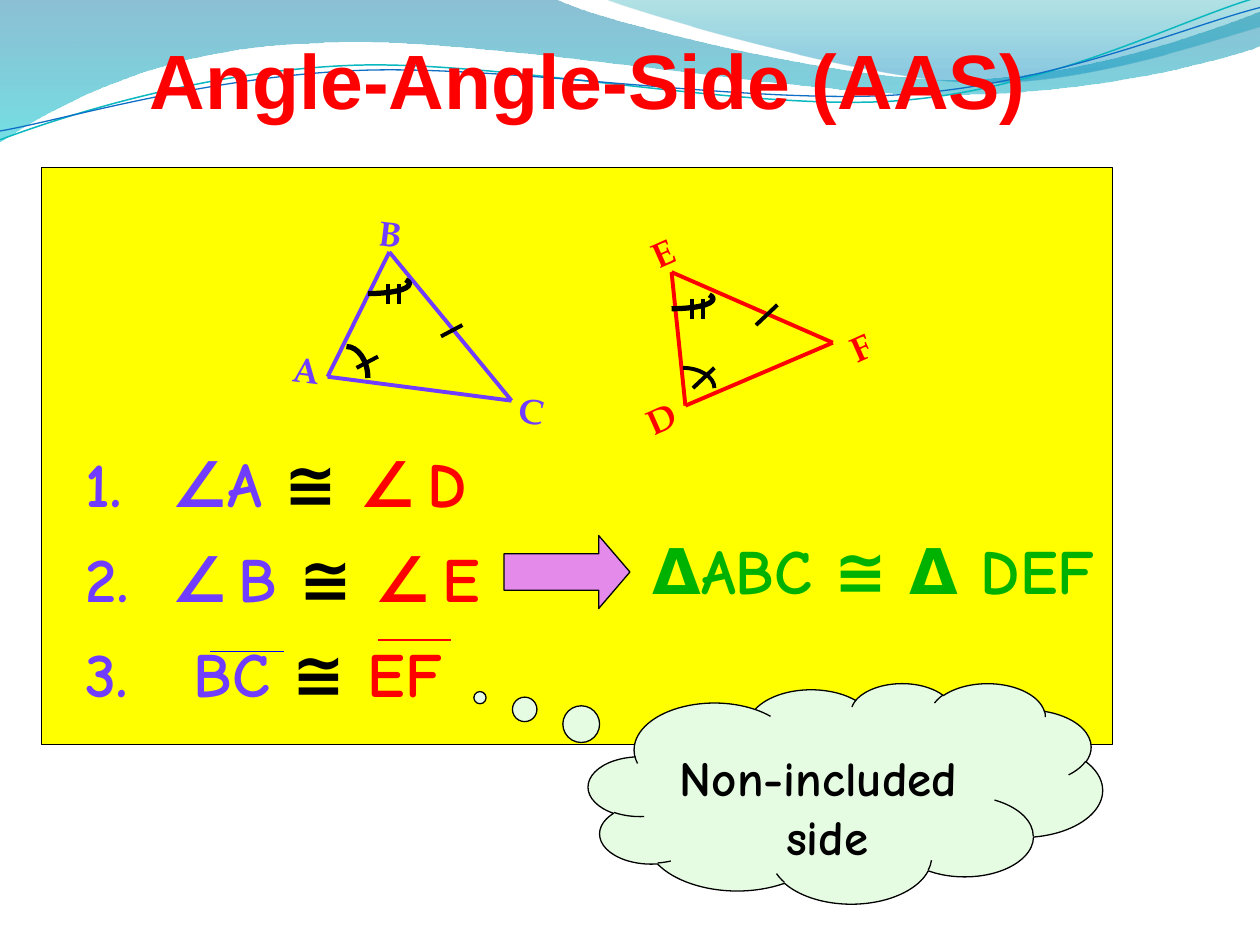
from dataclasses import dataclass

from lxml.etree import SubElement
from pptx import Presentation
from pptx.dml.color import RGBColor
from pptx.enum.shapes import MSO_CONNECTOR as CONN, MSO_SHAPE as SHAPE
from pptx.enum.text import MSO_ANCHOR as ANCHOR, MSO_AUTO_SIZE as FIT, PP_ALIGN as ALIGN
from pptx.oxml.ns import qn
from pptx.util import Inches, Pt


@dataclass(frozen=True)
class Theme:
    red: str = "FF0000"
    purple: str = "703DFF"
    green: str = "00B200"
    black: str = "000000"
    blue: str = "0000FF"
    yellow: str = "FFFF00"
    pink: str = "E38AEA"
    mint: str = "E6FCE2"
    wave_lines: tuple = (("0AB8BF", 0.85), ("0F6FC6", 0.75))
    title_font: str = "Arial"
    body_font: str = "Comic Neue"
    label_font: str = "TeX Gyre Pagella"
    title: int = 44
    body: int = 36
    callout: int = 28
    label: int = 20
    gap: int = 18
    thin: float = 0.75
    medium: float = 2.25
    thick: float = 3


T = Theme()


def rgb(value):
    return RGBColor.from_string(value)


def place(sp, box):
    for name, value in zip(("left", "top", "width", "height"), box):
        setattr(sp, name, Inches(value))


def add_run(p, text, color, size, font):
    r = p.add_run()
    r.text = text
    for name, value in dict(name=font, size=Pt(size), bold=True).items():
        setattr(r.font, name, value)
    r.font.color.rgb = rgb(color)


def format_frame(tf, **values):
    for name, value in dict(auto_size=FIT.NONE, word_wrap=True, **values).items():
        setattr(tf, name, value)


def add_line(shapes, start, end, color, width):
    line = shapes.add_connector(CONN.STRAIGHT, *map(Inches, (*start, *end)))
    line.line.color.rgb = rgb(color)
    line.line.width = Pt(width)
    SubElement(line._element.spPr, qn("a:effectLst"))


def add_block(shapes, kind, box, fill, adjustments=()):
    sp = shapes.add_shape(kind, *map(Inches, box))
    sp.shadow.inherit = False
    sp.fill.solid()
    sp.fill.fore_color.rgb = rgb(fill)
    sp.line.color.rgb = rgb(T.black)
    sp.line.width = Pt(T.thin)
    for i, value in enumerate(adjustments):
        sp.adjustments[i] = value
    return sp


def curves(points):
    """Split points into cubic Bezier segments of three points each."""
    return [points[i:i + 3] for i in range(0, len(points), 3)]


def add_path(shapes, start, segments, close=False):
    """Freeform whose segments hold one point for a line, three for a curve."""
    builder = shapes.build_freeform(*map(Inches, start))
    builder.add_line_segments([tuple(map(Inches, q)) for s in segments for q in s], close=close)
    sp = builder.convert_to_shape()
    sp.shadow.inherit = False
    path = next(sp._element.iter(qn("a:path")))
    steps = iter(path.findall(qn("a:lnTo")))
    for segment in segments:
        first, *rest = [next(steps) for _ in segment]
        if rest:
            first.tag = qn("a:cubicBezTo")
        for step in rest:
            first.append(step[0])
            path.remove(step)
    return sp


def add_curve(shapes, points, color, width):
    sp = add_path(shapes, points[0], curves(points[1:]))
    sp.fill.background()
    sp.line.color.rgb = rgb(color)
    sp.line.width = Pt(width)


def add_wave(shapes, start, segments, stops):
    sp = add_path(shapes, start, segments, close=True)
    sp.line.fill.background()
    sp.fill.gradient()
    sp.fill.gradient_angle = 270
    for stop, (position, color, alpha) in zip(sp.fill.gradient_stops, stops):
        stop.position = position
        stop.color.rgb = rgb(color)
        clr = next(stop._gs.iter(qn("a:srgbClr")))
        SubElement(clr, qn("a:alpha"), val=str(alpha * 1000))


def add_banner(shapes):
    upper = [(4.76, .17), (6.64, .63), (7.58, .63), (8.53, .63), (9.58, .26), (10, .09)]
    lower = [(9.83, .44), (8.7, .76), (7.46, .75), (6.22, .75), (3.82, .28),
             (2.57, .34), (1.29, .36), (.46, .83), (-.01, 1.13)]
    add_wave(shapes, (0, 0), [[(4.4, -.01)], *curves(upper), [(10.01, .36)], *curves(lower)],
             [(0, "0074A1", 45), (1, "00C6CF", 55)])
    crest = [(5.09, .11), (6.82, .62), (7.69, .65), (8.56, .69), (9.61, .32), (10, .21)]
    add_wave(shapes, (4.79, -.01), [*curves(crest), [(10, 0)]],
             [(0, "00A1A9", 30), (.8, "008BBF", 45)])
    strands = ([(0, 1.11), (.48, .93), (1.58, .57), (2.77, .52), (3.95, .47), (5.93, .89),
                (7.13, .8), (8.33, .71), (9.38, .15), (9.98, -.02)],
               [(0, 1.04), (.47, .96), (1.64, .61), (2.83, .56), (4.03, .51), (5.97, .84),
                (7.17, .75), (8.36, .67), (9.41, .21), (10, .06)])
    for points, style in zip(strands, T.wave_lines):
        add_curve(shapes, points, *style)


def add_title(sp, box):
    place(sp, box)
    tf = sp.text_frame
    format_frame(tf, vertical_anchor=ANCHOR.MIDDLE)
    tf.paragraphs[0].alignment = ALIGN.CENTER
    add_run(tf.paragraphs[0], "Angle-Angle-Side (AAS)", T.red, T.title, T.title_font)


def add_statements(sp, box):
    place(sp, box)
    tf = sp.text_frame
    format_frame(tf, vertical_anchor=ANCHOR.TOP)
    angle = [("≅ ", T.black, T.body), ("∠", T.red, T.body), (" ", T.black, T.gap)]
    rows = [
        (.5, [(" ∠A ", T.purple, T.body), *angle, ("D", T.red, T.body)]),
        (.5, [(" ∠", T.purple, T.body), (" ", T.black, T.gap), ("B ", T.purple, T.body),
              *angle, ("E", T.red, T.body)]),
        (.68, [(" BC", T.purple, T.body), (" ≅ ", T.black, T.body), ("EF", T.red, T.body)]),
    ]
    for i, (indent, runs) in enumerate(rows):
        p = tf.add_paragraph() if i else tf.paragraphs[0]
        p.space_before = Pt(11)
        pPr = p._p.get_or_add_pPr()
        pPr.set("marL", str(Inches(indent)))
        pPr.set("indent", str(-Inches(indent)))
        SubElement(pPr, qn("a:buFont"), typeface="+mj-lt")
        SubElement(pPr, qn("a:buAutoNum"), type="arabicPeriod")
        for text, color, size in runs:
            add_run(p, text, color, size, T.body_font)


def add_conclusion(shapes, box):
    tf = shapes.add_textbox(*map(Inches, box)).text_frame
    format_frame(tf)
    p = tf.paragraphs[0]
    p.space_before = Pt(18)
    add_run(p, "ΔABC ≅ Δ DEF", T.green, T.body, T.body_font)


def add_triangle(shapes, box, color, turn, corners, labels, ticks, arc, arc_width, hook):
    """Marked triangle; the hook is the doubly ticked angle at its top corner."""
    x0, y0 = box[:2]

    def at(x, y):
        return x0 + x, y0 + y

    for i, corner in enumerate(corners):
        add_line(shapes, at(*corners[i - 1]), at(*corner), color, T.medium)
    for letter, spot in labels.items():
        sp = shapes.add_textbox(*map(Inches, (*at(*spot), .19, .33)))
        sp.rotation = turn
        format_frame(sp.text_frame, margin_left=0, margin_right=0, margin_top=0, margin_bottom=0)
        sp.text_frame.word_wrap = False
        add_run(sp.text_frame.paragraphs[0], letter, color, T.label, T.label_font)
    add_curve(shapes, [at(*q) for q in arc], T.black, arc_width)
    hx, hy = hook
    bend = [(0, 0), (.18, 0), (.33, -.03), (.33, -.08), (.33, -.09), (.32, -.1), (.3, -.11)]
    add_curve(shapes, [at(hx + x, hy + y) for x, y in bend], T.black, T.thick)
    pair = [((hx + dx, hy - .08), (hx + dx, hy + .08)) for dx in (.16, .25)]
    for start, end in ticks + pair:
        add_line(shapes, at(*start), at(*end), T.black, T.medium)


def add_callout(shapes, box):
    sp = add_block(shapes, SHAPE.CLOUD_CALLOUT, box, T.mint, (-.711, -.433))
    tf = sp.text_frame
    format_frame(tf, vertical_anchor=ANCHOR.TOP, margin_top=Inches(.25))
    for i, text in enumerate(("Non-included ", "side")):
        p = tf.add_paragraph() if i else tf.paragraphs[0]
        p.alignment = ALIGN.CENTER
        add_run(p, text, T.black, T.callout, T.body_font)


def main():
    prs = Presentation()
    prs.slide_width, prs.slide_height = Inches(10), Inches(7.5)
    slide = prs.slides.add_slide(prs.slide_layouts[1])
    shapes = slide.shapes
    title, body = shapes.title, slide.placeholders[1]

    add_banner(shapes)
    shapes._spTree.append(title._element)
    add_title(title, (-.33, 0, 10, 1.25))
    add_block(shapes, SHAPE.RECTANGLE, (.33, 1.33, 8.5, 4.58), T.yellow)
    shapes._spTree.append(body._element)
    add_statements(body, (.58, 3.48, 3.92, 2.26))
    add_block(shapes, SHAPE.RIGHT_ARROW, (4, 4.25, 1, .58), T.pink, (.5, .428))
    add_conclusion(shapes, (5.08, 4.17, 3.75, .7))
    add_triangle(shapes, (2.33, 1.68, 2, 1.74), T.purple, 7,
                 corners=[(.27, 1.31), (.76, .32), (1.73, 1.5)],
                 labels={"A": (0, 1.08), "B": (.68, 0), "C": (1.79, 1.41)},
                 ticks=[((1.17, .99), (1.34, .9)), ((.5, 1.24), (.67, 1.15))],
                 arc=[(.42, 1.07), (.51, 1.07), (.59, 1.18), (.59, 1.32)],
                 arc_width=T.thick, hook=(.59, .65))
    add_triangle(shapes, (5.13, 1.83, 1.8, 1.67), T.red, 336,
                 corners=[(.31, 1.39), (.2, .33), (1.48, .89)],
                 labels={"D": (0, 1.33), "E": (.04, 0), "F": (1.62, .75)},
                 ticks=[((.87, .75), (1.04, .59)), ((.37, 1.25), (.54, 1.09))],
                 arc=[(.29, 1.09), (.42, 1.09), (.54, 1.16), (.54, 1.25)],
                 arc_width=T.medium, hook=(.2, .62))
    add_callout(shapes, (4.67, 5.42, 4.08, 1.75))
    for x, y, color in ((3, 5.08, T.red), (1.67, 5.17, T.blue)):
        add_line(shapes, (x, y), (x + .58, y), color, T.thin)
    prs.save("out.pptx")


if __name__ == "__main__":
    main()
